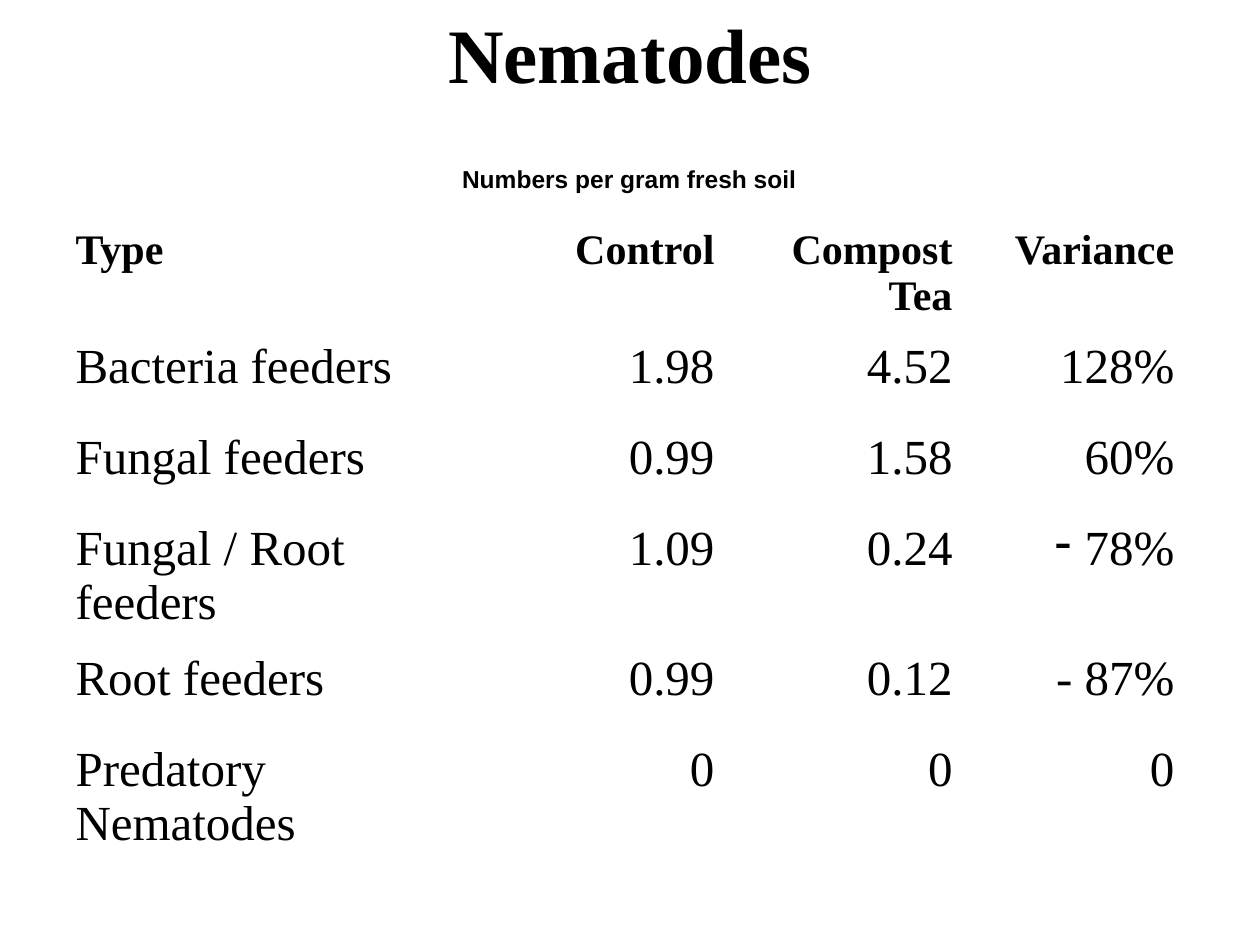
from lxml.etree import SubElement
from pptx import Presentation
from pptx.dml.color import RGBColor
from pptx.enum.text import MSO_ANCHOR, PP_ALIGN
from pptx.oxml.ns import qn
from pptx.util import Inches, Pt

BLACK = RGBColor(0, 0, 0)
WHITE = RGBColor(255, 255, 255)
SERIF, SANS = "Times New Roman", "Arial"

TITLE = "Nematodes"
UNITS = "Numbers per gram fresh soil"
ROWS = [
    ("Type", "Control", "Compost Tea", "Variance"),
    ("Bacteria feeders", "1.98", "4.52", "128%"),
    ("Fungal feeders", "0.99", "1.58", "60%"),
    ("Fungal / Root feeders", "1.09", "0.24", "78%"),
    ("Root feeders", "0.99", "0.12", "- 87%"),
    ("Predatory Nematodes", "0", "0", "0"),
]
DASH_BULLET_CELL = (3, 3)
COLUMN_WIDTHS = (3.51, 1.76, 1.89, 1.76)
ROW_HEIGHTS = (0.9, 0.72, 0.72, 1.03, 0.72, 1.03)
TABLE_LEFT, TABLE_TOP = 0.5, 1.75
OUTER_BORDER, INNER_BORDER = Pt(2.25), Pt(1)


def write(text_frame, text, size, font_name, bold, alignment):
    text_frame.text = text
    text_frame.word_wrap = True
    paragraph = text_frame.paragraphs[0]
    paragraph.alignment = alignment
    font = paragraph.runs[0].font
    font.size, font.name, font.bold = Pt(size), font_name, bold
    font.color.rgb = BLACK


def add_text(slide, box, *text_style):
    shape = slide.shapes.add_textbox(*map(Inches, box))
    shape.text_frame.vertical_anchor = MSO_ANCHOR.TOP
    write(shape.text_frame, *text_style)


def set_borders(cell, widths):
    """Draw white borders; widths maps the tags lnL, lnR, lnT and lnB to EMU."""
    properties = cell._tc.get_or_add_tcPr()
    for index, (tag, width) in enumerate(widths.items()):
        line = SubElement(properties, qn(f"a:{tag}"), w=str(width))
        fill = SubElement(line, qn("a:solidFill"))
        SubElement(fill, qn("a:srgbClr"), val=str(WHITE))
        properties.insert(index, line)


def add_dash_bullet(paragraph):
    properties = paragraph._p.get_or_add_pPr()
    SubElement(properties, qn("a:buFontTx"))
    SubElement(properties, qn("a:buChar"), char="-")


def add_results_table(slide):
    last_row, last_column = len(ROWS) - 1, len(COLUMN_WIDTHS) - 1
    table = slide.shapes.add_table(
        len(ROWS), len(COLUMN_WIDTHS), Inches(TABLE_LEFT), Inches(TABLE_TOP),
        Inches(sum(COLUMN_WIDTHS)), Inches(sum(ROW_HEIGHTS))).table
    table.horz_banding = False
    for column, width in zip(table.columns, COLUMN_WIDTHS):
        column.width = Inches(width)
    for row, height in zip(table.rows, ROW_HEIGHTS):
        row.height = Inches(height)

    for r, values in enumerate(ROWS):
        is_header = r == 0
        for c, value in enumerate(values):
            cell = table.cell(r, c)
            cell.fill.background()
            write(cell.text_frame, value, 24 if is_header else 28, SERIF,
                  is_header, PP_ALIGN.LEFT if c == 0 else PP_ALIGN.RIGHT)
            on_edge = {"lnL": c == 0, "lnR": c == last_column,
                       "lnT": is_header, "lnB": r == last_row}
            set_borders(cell, {tag: OUTER_BORDER if edge else INNER_BORDER
                               for tag, edge in on_edge.items()})
    add_dash_bullet(table.cell(*DASH_BULLET_CELL).text_frame.paragraphs[0])


def main():
    presentation = Presentation()
    presentation.slide_width, presentation.slide_height = Inches(10), Inches(7.5)
    slide = presentation.slides.add_slide(presentation.slide_layouts[6])
    add_text(slide, (0.75, 0, 8.5, 1.25), TITLE, 44, SERIF, True, PP_ALIGN.CENTER)
    add_results_table(slide)
    add_text(slide, (3.5, 1.25, 2.92, 0.33), UNITS, 14, SANS, True, PP_ALIGN.RIGHT)
    presentation.save("out.pptx")


if __name__ == "__main__":
    main()
